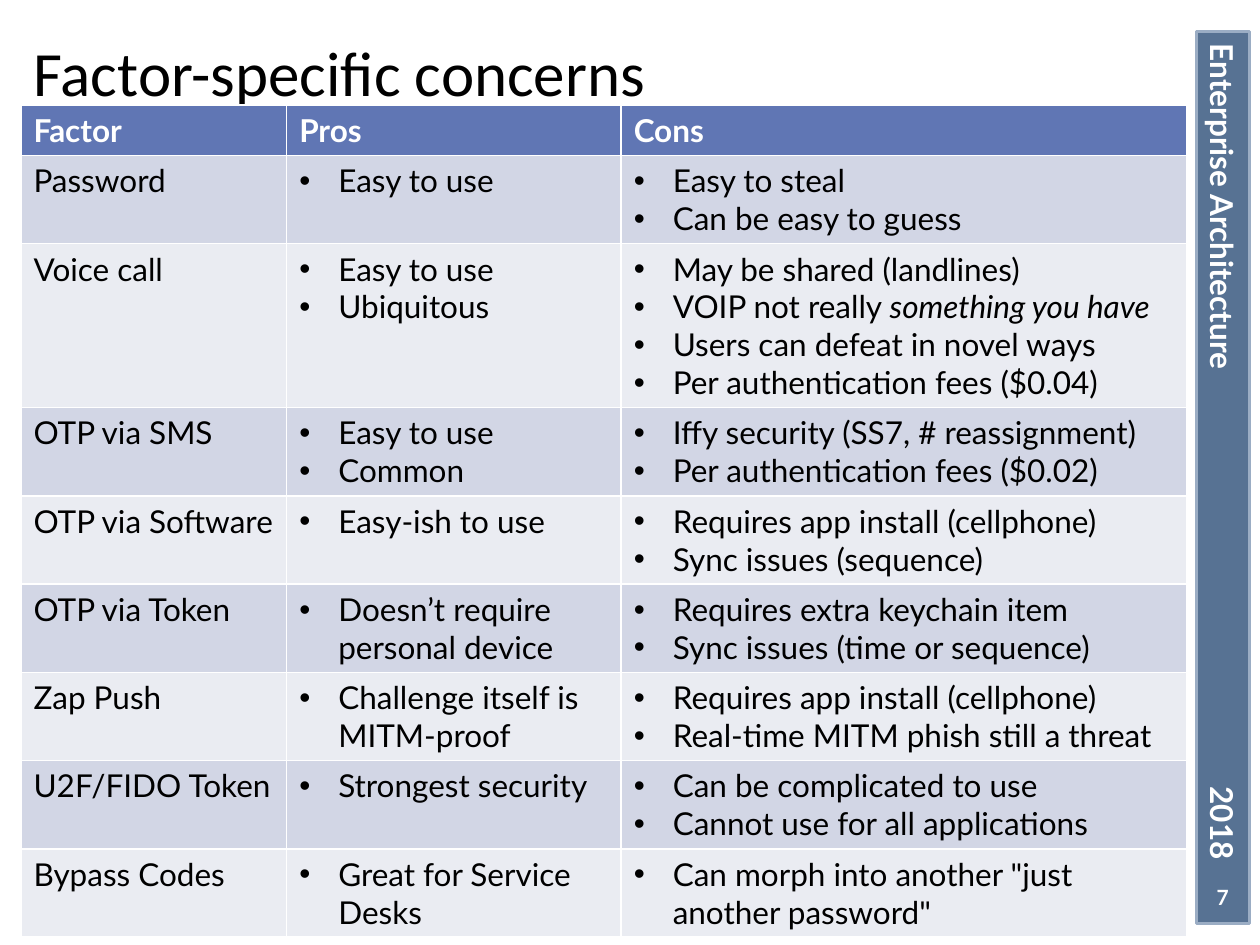
import pptx
import pptx.util
import pptx.dml.color
import pptx.enum.shapes
import pptx.enum.text
import pptx.oxml.ns
import lxml.etree

TITLE = "Factor-specific concerns"
HEADS = ["Factor", "Pros", "Cons"]
SOFT = "something you have"
ROWS = [
    ("Password", ["Easy to use"], ["Easy to steal", "Can be easy to guess"]),
    ("Voice call", ["Easy to use", "Ubiquitous"],
     ["May be shared (landlines)", "VOIP not really " + SOFT,
      "Users can defeat in novel ways", "Per authentication fees ($0.04)"]),
    ("OTP via SMS", ["Easy to use", "Common"],
     ["Iffy security (SS7, # reassignment)", "Per authentication fees ($0.02)"]),
    ("OTP via Software", ["Easy-ish to use"],
     ["Requires app install (cellphone)", "Sync issues (sequence)"]),
    ("OTP via Token", ["Doesn’t require personal device"],
     ["Requires extra keychain item", "Sync issues (time or sequence)"]),
    ("Zap Push", ["Challenge itself is MITM-proof"],
     ["Requires app install (cellphone)", "Real-time MITM phish still a threat"]),
    ("U2F/FIDO Token", ["Strongest security"],
     ["Can be complicated to use", "Cannot use for all applications"]),
    ("Bypass Codes", ["Great for Service Desks"],
     ['Can morph into another "just another password"']),
]

THEME = {
    "ink": "000000", "white": "FFFFFF", "bar": "577293", "rule": "9BADC4",
    "head": "6076B4", "bands": ["D2D6E5", "EAECF2"],
    "big": 36, "body": 18, "small": 12, "font": "Lato", "face": "Calibri",
}
WIDE, HIGH = 10, 7.5
LEFT, TOP, SPAN = WIDE / 60, HIGH / 9, WIDE * 0.925
SHARES = [0.228, 0.287, 0.485]
LINE, PAD, DENT = HIGH * 0.04, 0.1, 0.31
SIDE, THICK = WIDE * 0.9705, 0.42

inch = pptx.util.Inches
ALIGN = pptx.enum.text.PP_ALIGN
MIDDLE = pptx.enum.text.MSO_ANCHOR.MIDDLE


def tint(name):
    return pptx.dml.color.RGBColor.from_string(name)


def box(x, y, w, h):
    return [inch(v) for v in (x, y, w, h)]


def write(para, text, **extra):
    look = {"name": THEME["font"], "size": THEME["body"], "bold": False,
            "italic": False, "color": THEME["ink"], **extra}
    run = para.add_run()
    run.text = text
    run.font.color.rgb = tint(look.pop("color"))
    look["size"] = pptx.util.Pt(look["size"])
    for key, val in look.items():
        setattr(run.font, key, val)


def bullet(para):
    props = para._p.get_or_add_pPr()
    for key, val in {"marL": DENT, "indent": -DENT}.items():
        props.set(key, str(int(inch(val))))
    for tag, key, val in (("a:buFont", "typeface", "Arial"), ("a:buChar", "char", "•")):
        lxml.etree.SubElement(props, pptx.oxml.ns.qn(tag)).set(key, val)


def fill(cell, color):
    cell.fill.solid()
    cell.fill.fore_color.rgb = tint(color)


def label(shape, text, align, size):
    frame = shape.text_frame
    for key, val in {"word_wrap": True, "vertical_anchor": MIDDLE}.items():
        setattr(frame, key, val)
    para = frame.paragraphs[0]
    para.alignment = align
    write(para, text, size=size, bold=True, color=THEME["white"])


def edge(slide):
    top, long = HIGH * 0.0333, HIGH * 0.944
    bar = slide.shapes.add_shape(
        pptx.enum.shapes.MSO_SHAPE.RECTANGLE,
        *box(SIDE - long / 2, top + long / 2, long, THICK))
    bar.top -= inch(THICK / 2)
    bar.rotation = 90
    bar.shadow.inherit = False
    fill(bar, THEME["bar"])
    bar.line.color.rgb = tint(THEME["rule"])
    bar.line.width = pptx.util.Pt(2)
    label(bar, "Enterprise Architecture", ALIGN.LEFT, THEME["body"])

    year = slide.shapes.add_textbox(*box(SIDE - THICK, 6.29, 2 * THICK, THICK))
    year.rotation = 90
    label(year, "2018", ALIGN.RIGHT, THEME["body"])

    page = slide.shapes.add_textbox(*box(SIDE - THICK / 2, 6.92, THICK, 0.4))
    label(page, "7", ALIGN.CENTER, THEME["small"])

    rule = slide.shapes.add_connector(
        pptx.enum.shapes.MSO_CONNECTOR.STRAIGHT,
        *[inch(v) for v in (LEFT, TOP, LEFT + SPAN, TOP)])
    rule.line.color.rgb = tint(THEME["rule"])
    rule.line.width = pptx.util.Pt(1.5)
    lxml.etree.SubElement(rule._element.spPr, pptx.oxml.ns.qn("a:effectLst"))


def head(slide):
    title = slide.shapes.title
    spot = box(LEFT, HIGH * 0.04, SPAN, TOP - HIGH * 0.04)
    for key, val in zip(("left", "top", "width", "height"), spot):
        setattr(title, key, val)
    frame = title.text_frame
    frame.vertical_anchor = MIDDLE
    frame.auto_size = pptx.enum.text.MSO_AUTO_SIZE.NONE
    frame.paragraphs[0].alignment = ALIGN.LEFT
    write(frame.paragraphs[0], TITLE, name=THEME["face"], size=THEME["big"])


def grid(slide):
    lines = [1] + [max(2, len(pros), len(cons)) for _, pros, cons in ROWS]
    highs = [PAD + LINE * n for n in lines]
    table = slide.shapes.add_table(
        len(highs), len(HEADS), *box(LEFT, TOP, SPAN, sum(highs))).table
    for col, share in zip(table.columns, SHARES):
        col.width = inch(SPAN * share)
    for row, high in zip(table.rows, highs):
        row.height = inch(high)
    for c, text in enumerate(HEADS):
        cell = table.cell(0, c)
        fill(cell, THEME["head"])
        write(cell.text_frame.paragraphs[0], text, bold=True, color=THEME["white"])
    for r, (name, pros, cons) in enumerate(ROWS):
        for c, items in enumerate(([name], pros, cons)):
            cell = table.cell(r + 1, c)
            fill(cell, THEME["bands"][r % 2])
            frame = cell.text_frame
            for n, item in enumerate(items):
                para = frame.add_paragraph() if n else frame.paragraphs[0]
                if c:
                    bullet(para)
                plain, mark, _ = item.partition(SOFT)
                write(para, plain)
                if mark:
                    write(para, mark, italic=True)


def main():
    deck = pptx.Presentation()
    deck.slide_width, deck.slide_height = inch(WIDE), inch(HIGH)
    slide = deck.slides.add_slide(deck.slide_layouts[5])
    edge(slide)
    head(slide)
    grid(slide)
    deck.save("out.pptx")


if __name__ == "__main__":
    main()
